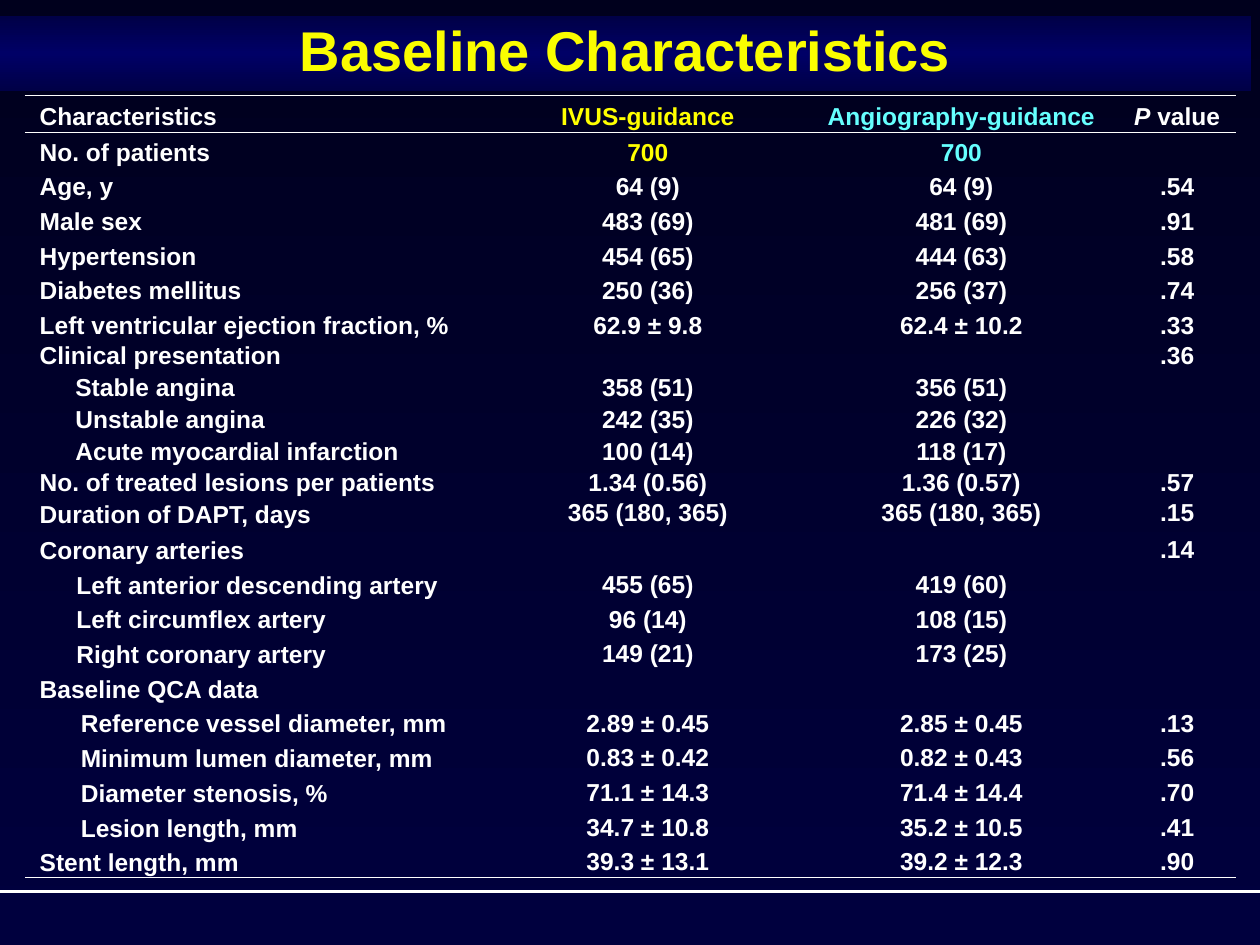
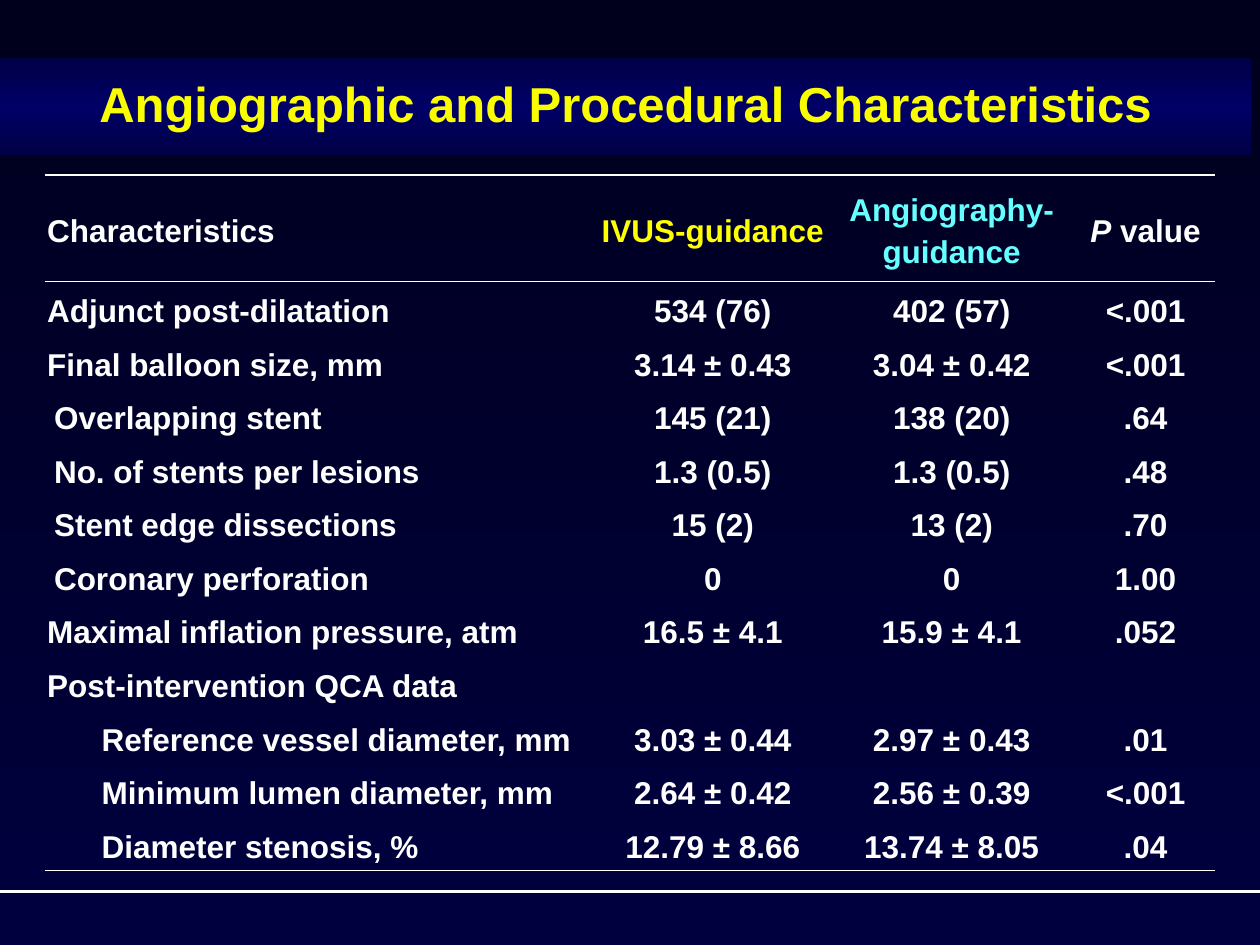
"""Build two slides with tables of baseline and procedural characteristics."""
from copy import deepcopy

from lxml import etree
from pptx import Presentation
from pptx.dml.color import RGBColor
from pptx.enum import shapes, text as text_enums
from pptx.oxml import ns
from pptx.util import Cm, Pt

FONT = "Arial"
WHITE = RGBColor(0xFF, 0xFF, 0xFF)
TITLE_YELLOW = RGBColor(0xFA, 0xFD, 0x00)
IVUS_YELLOW = RGBColor(0xFF, 0xFF, 0x00)
ANGIO_CYAN = RGBColor(0x66, 0xFF, 0xFF)
NIGHT = RGBColor(0x00, 0x00, 0x1D)
NAVY = RGBColor(0x00, 0x00, 0x3E)
BAND_EDGE = RGBColor(0x00, 0x00, 0x47)
BAND_CENTRE = RGBColor(0x00, 0x00, 0x66)
PLAIN_TABLE_STYLE = "{2D5ABB26-0587-4C30-8999-92F81FD0307C}"
COLUMN_COLORS = [WHITE, IVUS_YELLOW, ANGIO_CYAN, WHITE]
HEADER = (0, "Characteristics", "IVUS-guidance", "Angiography-guidance", " value")

BASELINE_ROWS = [
    HEADER,
    (0, "No. of patients", "700", "700", ""),
    (0, "Age, y", "64 (9)", "64 (9)", ".54"),
    (0, "Male sex", "483 (69)", "481 (69)", ".91"),
    (0, "Hypertension", "454 (65)", "444 (63)", ".58"),
    (0, "Diabetes mellitus", "250 (36)", "256 (37)", ".74"),
    (0, "Left ventricular ejection fraction, %", "62.9 ± 9.8", "62.4 ± 10.2", ".33"),
    (0, "Clinical presentation", "", "", ".36"),
    (0.72, "Stable angina", "358 (51)", "356 (51)", ""),
    (0.72, "Unstable angina", "242 (35)", "226 (32)", ""),
    (0.72, "Acute myocardial infarction", "100 (14)", "118 (17)", ""),
    (0, "No. of treated lesions per patients", "1.34 (0.56)", "1.36 (0.57)", ".57"),
    (0, "Duration of DAPT, days", "365 (180, 365)", "365 (180, 365)", ".15"),
    (0, "Coronary arteries", "", "", ".14"),
    (0.74, "Left anterior descending artery", "455 (65)", "419 (60)", ""),
    (0.74, "Left circumflex artery", "96 (14)", "108 (15)", ""),
    (0.74, "Right coronary artery", "149 (21)", "173 (25)", ""),
    (0, "Baseline QCA data", "", "", ""),
    (0.83, "Reference vessel diameter, mm", "2.89 ± 0.45", "2.85 ± 0.45", ".13"),
    (0.83, "Minimum lumen diameter, mm", "0.83 ± 0.42", "0.82 ± 0.43", ".56"),
    (0.83, "Diameter stenosis, %", "71.1 ± 14.3", "71.4 ± 14.4", ".70"),
    (0.83, "Lesion length, mm", "34.7 ± 10.8", "35.2 ± 10.5", ".41"),
    (0, "Stent length, mm", "39.3 ± 13.1", "39.2 ± 12.3", ".90"),
]
COMPACT_ROWS = range(7, 13)
FIRST_TOP_ROW = 12

PROCEDURE_ROWS = [
    HEADER,
    (0, "Adjunct post-dilatation", "534 (76)", "402 (57)", "<.001"),
    (0, "Final balloon size, mm", "3.14 ± 0.43", "3.04 ± 0.42", "<.001"),
    (0.14, "Overlapping stent", "145 (21)", "138 (20)", ".64"),
    (0.14, "No. of stents per lesions", "1.3 (0.5)", "1.3 (0.5)", ".48"),
    (0.14, "Stent edge dissections", "15 (2)", "13 (2)", ".70"),
    (0.14, "Coronary perforation", "0", "0", "1.00"),
    (0, "Maximal inflation pressure, atm", "16.5 ± 4.1", "15.9 ± 4.1", ".052"),
    (0, "Post-intervention QCA data", "", "", ""),
    (1.1, "Reference vessel diameter, mm", "3.03 ± 0.44", "2.97 ± 0.43", ".01"),
    (1.1, "Minimum lumen diameter, mm", "2.64 ± 0.42", "2.56 ± 0.39", "<.001"),
    (1.1, "Diameter stenosis, %", "12.79 ± 8.66", "13.74 ± 8.05", ".04"),
]


def write_text(frame, content, size, color=WHITE, centered=True, spacing=1.2, italic_start=""):
    """Write one bold paragraph, optionally starting with an italic run."""
    paragraph = frame.paragraphs[0]
    align = text_enums.PP_ALIGN
    paragraph.alignment = align.CENTER if centered else align.LEFT
    paragraph.line_spacing = spacing
    for part, italic in ((italic_start, True), (content, False)):
        if part:
            run = paragraph.add_run()
            run.text = part
            run.font.name, run.font.size = FONT, Pt(size)
            run.font.bold, run.font.italic = True, italic
            run.font.color.rgb = color
    if not paragraph.runs:
        etree.SubElement(paragraph._p, ns.qn("a:endParaRPr"), sz=str(size * 100))


def fill_gradient(fill, element, colors):
    """Fill from top to bottom with evenly spaced colours."""
    fill.gradient()
    fill.gradient_angle = 270
    stop_list = next(element.iter(ns.qn("a:gsLst")))
    for _ in colors[2:]:
        stop_list.append(deepcopy(stop_list[0]))
    for index, (stop, color) in enumerate(zip(fill.gradient_stops, colors)):
        stop.position = index / (len(colors) - 1)
        stop.color.rgb = color


def add_footer_line(slide):
    """Draw the white line across the foot of the slide."""
    line = slide.shapes.add_connector(
        shapes.MSO_CONNECTOR.STRAIGHT, 0, Cm(17.98), Cm(25.4), Cm(17.98))
    line.line.color.rgb = WHITE
    line.line.width = Pt(1.75)
    etree.SubElement(line.element.spPr, ns.qn("a:effectLst"))


def add_titled_slide(presentation, title_text, top, height, size):
    """Add a slide with the footer line and a title band."""
    slide = presentation.slides.add_slide(presentation.slide_layouts[5])
    add_footer_line(slide)
    title = slide.shapes.title
    title.left, title.top, title.width, title.height = 0, Cm(top), Cm(25.22), Cm(height)
    fill_gradient(title.fill, title.element, [BAND_EDGE, BAND_CENTRE, BAND_EDGE])
    frame = title.text_frame
    frame.word_wrap = True
    frame.auto_size = text_enums.MSO_AUTO_SIZE.NONE
    frame.vertical_anchor = text_enums.MSO_ANCHOR.MIDDLE
    write_text(frame, title_text, size, TITLE_YELLOW, spacing=0.9)
    return slide


def add_border(cell, side):
    """Give a cell a white line on one side, such as lnT or lnB."""
    properties = cell._tc.get_or_add_tcPr()
    line = etree.SubElement(properties, ns.qn(f"a:{side}"), w=str(Pt(1)))
    solid = etree.SubElement(line, ns.qn("a:solidFill"))
    etree.SubElement(solid, ns.qn("a:srgbClr"), val=str(WHITE))


def add_data_table(slide, rows, left, top, widths, heights, size, label_inset,
                   colored_rows=1, compact_rows=(), first_top_row=None):
    """Add a table ruled above and below the header and at its foot."""
    frame = slide.shapes.add_table(
        len(rows), len(widths), Cm(left), Cm(top), Cm(sum(widths)), Cm(sum(heights)))
    next(frame.element.iter(ns.qn("a:tableStyleId"))).text = PLAIN_TABLE_STYLE
    table = frame.table
    table.first_row = table.horz_banding = False
    for column, width in zip(table.columns, widths):
        column.width = Cm(width)
    for row_index, (indent, *values) in enumerate(rows):
        table.rows[row_index].height = Cm(heights[row_index])
        for column_index, value in enumerate(values):
            cell = table.cell(row_index, column_index)
            is_label = column_index == 0
            is_top = first_top_row is not None and row_index >= first_top_row
            cell.margin_left = Cm(label_inset + indent) if is_label else Cm(0.05)
            cell.margin_right = Cm(0.05)
            cell.margin_top = cell.margin_bottom = 0
            anchors = text_enums.MSO_ANCHOR
            cell.vertical_anchor = anchors.TOP if is_top and not is_label else anchors.MIDDLE
            if row_index == 0:
                add_border(cell, "lnT")
            if row_index in (0, len(rows) - 1):
                add_border(cell, "lnB")
            cell.fill.background()
            write_text(
                cell.text_frame, value, size,
                color=COLUMN_COLORS[column_index] if row_index < colored_rows else WHITE,
                centered=not is_label,
                spacing=1.0 if row_index in compact_rows else 1.2,
                italic_start="P" if row_index == 0 and column_index == 3 else "")


def main():
    """Build and save the presentation."""
    presentation = Presentation()
    presentation.slide_width, presentation.slide_height = Cm(25.4), Cm(19.05)
    master = presentation.slide_master
    fill_gradient(master.background.fill, master.element, [NIGHT, NAVY])

    slide = add_titled_slide(presentation, "Baseline Characteristics", 0.33, 1.5, 32)
    heights = [0.74] + [0.64 if index in COMPACT_ROWS else 0.7
                        for index in range(1, len(BASELINE_ROWS))]
    add_data_table(slide, BASELINE_ROWS, 0.5, 1.93, [9.4, 6.32, 6.32, 2.38], heights,
                   size=14, label_inset=0.3, colored_rows=2,
                   compact_rows=COMPACT_ROWS, first_top_row=FIRST_TOP_ROW)

    slide = add_titled_slide(
        presentation, "Angiographic and Procedural Characteristics", 1.17, 1.96, 28)
    heights = [2.14] + [1.08] * (len(PROCEDURE_ROWS) - 1)
    add_data_table(slide, PROCEDURE_ROWS, 0.9, 3.53, [11.17, 4.6, 5.03, 2.79], heights,
                   size=18, label_inset=0.05)
    presentation.save("out.pptx")


if __name__ == "__main__":
    main()
